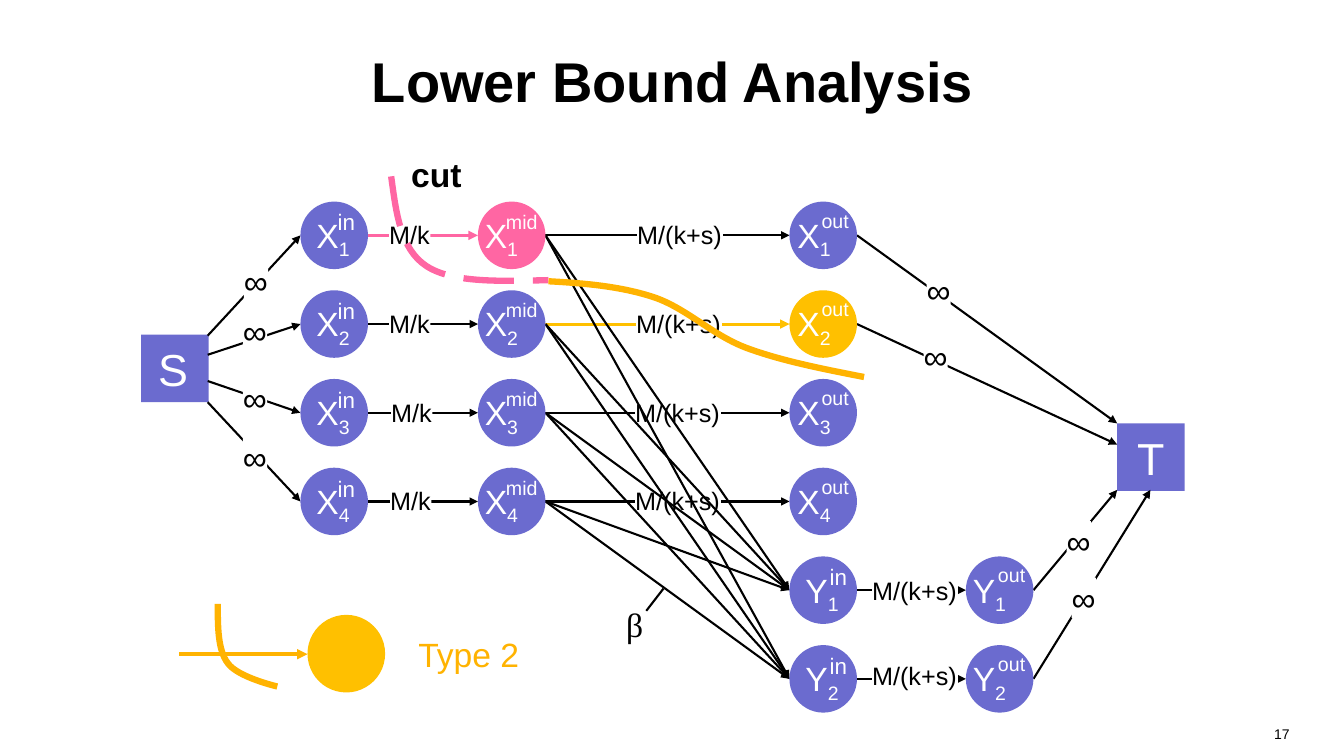
from dataclasses import dataclass
from itertools import product

from lxml import etree
from pptx import Presentation
from pptx.dml.color import RGBColor
from pptx.enum.dml import MSO_LINE
from pptx.enum.shapes import MSO_CONNECTOR, MSO_SHAPE
from pptx.enum.text import MSO_ANCHOR, MSO_AUTO_SIZE, PP_ALIGN
from pptx.oxml.ns import qn
from pptx.util import Inches, Pt

LEFT, CENTER, RIGHT = PP_ALIGN.LEFT, PP_ALIGN.CENTER, PP_ALIGN.RIGHT
MIDDLE = MSO_ANCHOR.MIDDLE
FIT_SHAPE, FIT_NONE = MSO_AUTO_SIZE.SHAPE_TO_FIT_TEXT, MSO_AUTO_SIZE.NONE
STRAIGHT = MSO_CONNECTOR.STRAIGHT
OVAL, RECTANGLE = MSO_SHAPE.OVAL, MSO_SHAPE.RECTANGLE
LONG_DASH = MSO_LINE.LONG_DASH

BLACK = RGBColor(0x00, 0x00, 0x00)
WHITE = RGBColor(0xFF, 0xFF, 0xFF)
VIOLET = RGBColor(0x6B, 0x6B, 0xCF)
PINK = RGBColor(0xFF, 0x66, 0xA3)
GOLD = RGBColor(0xFF, 0xC0, 0x00)
AMBER = RGBColor(0xFF, 0xB3, 0x01)

NODE = 0.67
FIRST_ROW, ROW_STEP = 2.0, 0.88
IN_X, MID_X, OUT_X, Y_OUT_X = 2.98, 4.74, 7.83, 9.58

Point = tuple[float, float]


@dataclass
class NodeColumn:
    letter: str
    superscript: str
    x: float
    first_row: int
    count: int
    letter_dx: float
    super_dx: float
    super_dy: float
    super_width: float
    super_size: int = 14
    marked: int = -1
    marked_color: RGBColor = VIOLET


@dataclass
class Edge:
    start: Point
    end: Point
    color: RGBColor = BLACK
    width: float = 1.5
    arrow: bool = True


@dataclass
class Curve:
    start: Point
    controls: list[Point]  # three points for each Bézier segment
    color: RGBColor
    dashed: bool = False


COLUMNS = [
    NodeColumn("X", "in", IN_X, 0, 4, 0.06, 0.27, 0.02, 0.38, 16),
    NodeColumn("X", "mid", MID_X, 0, 4, -0.03, 0.18, 0.03, 0.52, marked=0, marked_color=PINK),
    NodeColumn("X", "out", OUT_X, 0, 4, -0.02, 0.22, 0.02, 0.47, marked=1, marked_color=GOLD),
    NodeColumn("Y", "in", OUT_X, 4, 2, 0.06, 0.3, 0.02, 0.38, 16),
    NodeColumn("Y", "out", Y_OUT_X, 4, 2, -0.03, 0.22, 0.02, 0.47),
]


def row_top(row: int) -> float:
    return FIRST_ROW + ROW_STEP * row


def left_of(x: float, row: int) -> Point:
    return x, row_top(row) + NODE / 2


def right_of(x: float, row: int) -> Point:
    return x + NODE, row_top(row) + NODE / 2


def write(frame, text: str, size: float, color: RGBColor = BLACK, font: str = "Arial",
          bold: bool = False, align=LEFT, subscript: str = "") -> None:
    paragraph = frame.paragraphs[0]
    paragraph.alignment = align
    for part in filter(None, (text, subscript)):
        run = paragraph.add_run()
        run.text = part
        run.font.name, run.font.size, run.font.bold = font, Pt(size), bold
        run.font.color.rgb = color
    if subscript:
        run._r.get_or_add_rPr().set("baseline", "-25000")


def add_text(slide, text: str, x: float, y: float, width: float, height: float, size: float,
             wrap: bool = False, backed: bool = False, inset: Point = (0.1, 0.05), **style) -> None:
    box = slide.shapes.add_textbox(Inches(x), Inches(y), Inches(width), Inches(height))
    frame = box.text_frame
    frame.word_wrap, frame.auto_size = wrap, FIT_SHAPE
    frame.margin_left = frame.margin_right = Inches(inset[0])
    frame.margin_top = frame.margin_bottom = Inches(inset[1])
    if backed:
        box.fill.solid()
        box.fill.fore_color.rgb = WHITE
    write(frame, text, size, **style)


def add_capacity(slide, text: str, x: float, y: float, width: float) -> None:
    add_text(slide, text, x, y, width, 0.4, 18, backed=True, inset=(0, 0.05))


def add_node(slide, kind, x: float, y: float, size: float, color: RGBColor) -> None:
    node = slide.shapes.add_shape(kind, Inches(x), Inches(y), Inches(size), Inches(size))
    node.shadow.inherit = False
    node.fill.solid()
    node.fill.fore_color.rgb = color
    node.line.fill.background()


def add_edge(slide, edge: Edge) -> None:
    ends = [Inches(value) for value in (*edge.start, *edge.end)]
    line = slide.shapes.add_connector(STRAIGHT, *ends)
    line.line.color.rgb, line.line.width = edge.color, Pt(edge.width)
    if edge.arrow:
        etree.SubElement(line.line._get_or_add_ln(), qn("a:tailEnd"), type="triangle")
    etree.SubElement(line._element.spPr, qn("a:effectLst"))


def add_curve(slide, curve: Curve) -> None:
    builder = slide.shapes.build_freeform(*map(Inches, curve.start), scale=1.0)
    builder.add_line_segments([(Inches(x), Inches(y)) for x, y in curve.controls], close=False)
    shape = builder.convert_to_shape()
    shape.shadow.inherit = False
    shape.fill.background()
    shape.line.color.rgb, shape.line.width = curve.color, Pt(4.5)
    if curve.dashed:
        shape.line.dash_style = LONG_DASH
    # Turn each three straight steps into one cubic segment
    steps = list(shape._element.iter(qn("a:lnTo")))
    for first in range(0, len(steps), 3):
        cubic = etree.Element(qn("a:cubicBezTo"))
        steps[first].addprevious(cubic)
        for step in steps[first:first + 3]:
            cubic.append(step[0])
            step.getparent().remove(step)


def add_column(slide, column: NodeColumn) -> None:
    for index in range(column.count):
        top = row_top(column.first_row + index)
        color = column.marked_color if index == column.marked else VIOLET
        add_node(slide, OVAL, column.x, top, NODE, color)
        add_text(slide, column.letter, column.x + column.letter_dx, top + 0.08, 0.55, 0.5, 24,
                 color=WHITE, subscript=str(index + 1))
        add_text(slide, column.superscript, column.x + column.super_dx, top + column.super_dy,
                 column.super_width, 0.37 if column.super_size == 16 else 0.34,
                 column.super_size, color=WHITE)


def draw_network(slide) -> None:
    # Edges from mid to out, with the fan to Y above their labels
    for row in range(4):
        color, width = (GOLD, 2.25) if row == 1 else (BLACK, 1.5)
        add_edge(slide, Edge(right_of(MID_X, row), left_of(OUT_X, row), color, width))
    for row, x in enumerate((6.32, 6.31, 6.3, 6.3)):
        add_capacity(slide, "M/(k+s)", x, row_top(row) + 0.13, 0.85)
    for target, row in product((4, 5), range(4)):
        add_edge(slide, Edge(right_of(MID_X, row), left_of(OUT_X, target)))
    add_text(slide, "β", 5.95, 5.94, 0.69, 0.5, 24, wrap=True, font="Times New Roman", align=CENTER)
    add_edge(slide, Edge((6.58, 5.84), (6.41, 6.06), arrow=False))

    # Source, sink and the edges beside them
    for letter, x, y, text_dx, width in (("S", 1.4, 3.32, 0.07, 0.5), ("T", 11.08, 4.2, 0.1, 0.48)):
        add_node(slide, RECTANGLE, x, y, NODE, VIOLET)
        add_text(slide, letter, x + text_dx, y + 0.02, width, 0.64, 32, color=WHITE)
    for row, y in enumerate((3.33, 3.52, 3.78, 3.99)):
        add_edge(slide, Edge((2.06, y), left_of(IN_X, row)))
    for x, row, end in ((OUT_X, 0, (11.08, 4.2)), (OUT_X, 1, (11.08, 4.41)),
                        (Y_OUT_X, 4, (11.08, 4.86)), (Y_OUT_X, 5, (11.41, 4.86))):
        add_edge(slide, Edge(right_of(x, row), end))

    # Edges from in to mid, and between the Y nodes
    for row, x in enumerate((3.86, 3.86, 3.88, 3.87)):
        color, width = (PINK, 2.25) if row == 0 else (BLACK, 1.5)
        add_edge(slide, Edge(right_of(IN_X, row), left_of(MID_X, row), color, width))
        add_capacity(slide, "M/k", x, row_top(row) + 0.13, 0.41)
    for row, y in ((4, 5.66), (5, 6.5)):
        add_edge(slide, Edge(right_of(OUT_X, row), left_of(Y_OUT_X, row)))
        add_capacity(slide, "M/(k+s)", 8.65, y, 0.85)

    for column in COLUMNS:
        add_column(slide, column)
    for x, y in ((2.42, 2.59), (2.41, 3.08), (2.41, 3.75), (2.41, 4.33),
                 (9.19, 2.68), (9.16, 3.33), (10.63, 5.73), (10.58, 5.17)):
        add_text(slide, "∞", x, y, 0.24, 0.4, 24, backed=True, inset=(0, 0))


def draw_cut_and_legend(slide) -> None:
    add_text(slide, "cut", 3.98, 1.48, 0.71, 0.5, 24, bold=True)
    add_node(slide, OVAL, 3.05, 6.1, 0.77, GOLD)
    add_edge(slide, Edge((1.78, 6.49), (3.05, 6.49), AMBER, 2.5))
    add_text(slide, "Type 2", 4.05, 6.24, 1.21, 0.5, 24, color=AMBER)
    for curve in (
        Curve((2.16, 5.99), [(2.16, 6.22), (2.16, 6.45), (2.26, 6.58),
                             (2.36, 6.72), (2.75, 6.81), (2.75, 6.81)], AMBER),
        Curve((3.88, 1.75), [(3.93, 2.11), (3.97, 2.47), (4.23, 2.64),
                             (4.49, 2.81), (4.97, 2.79), (5.44, 2.78)], PINK, dashed=True),
        Curve((5.44, 2.79), [(5.8, 2.81), (6.16, 2.84), (6.49, 2.95), (6.81, 3.06), (7.06, 3.32),
                             (7.4, 3.45), (7.75, 3.58), (8.16, 3.66), (8.57, 3.74)], AMBER),
    ):
        add_curve(slide, curve)


def main() -> None:
    deck = Presentation()
    deck.slide_width, deck.slide_height = Inches(13.33), Inches(7.5)
    slide = deck.slides.add_slide(deck.slide_layouts[5])

    # Title and page number
    title = slide.shapes.title
    title.left, title.top, title.width, title.height = map(Inches, (0.67, 0.17, 12, 1.25))
    title.text_frame.vertical_anchor, title.text_frame.auto_size = MIDDLE, FIT_NONE
    write(title.text_frame, "Lower Bound Analysis", 40, bold=True, align=CENTER)
    add_text(slide, "17", 9.78, 7.15, 3.11, 0.35, 10, wrap=True, align=RIGHT)

    draw_network(slide)
    draw_cut_and_legend(slide)
    deck.save("out.pptx")


if __name__ == "__main__":
    main()
